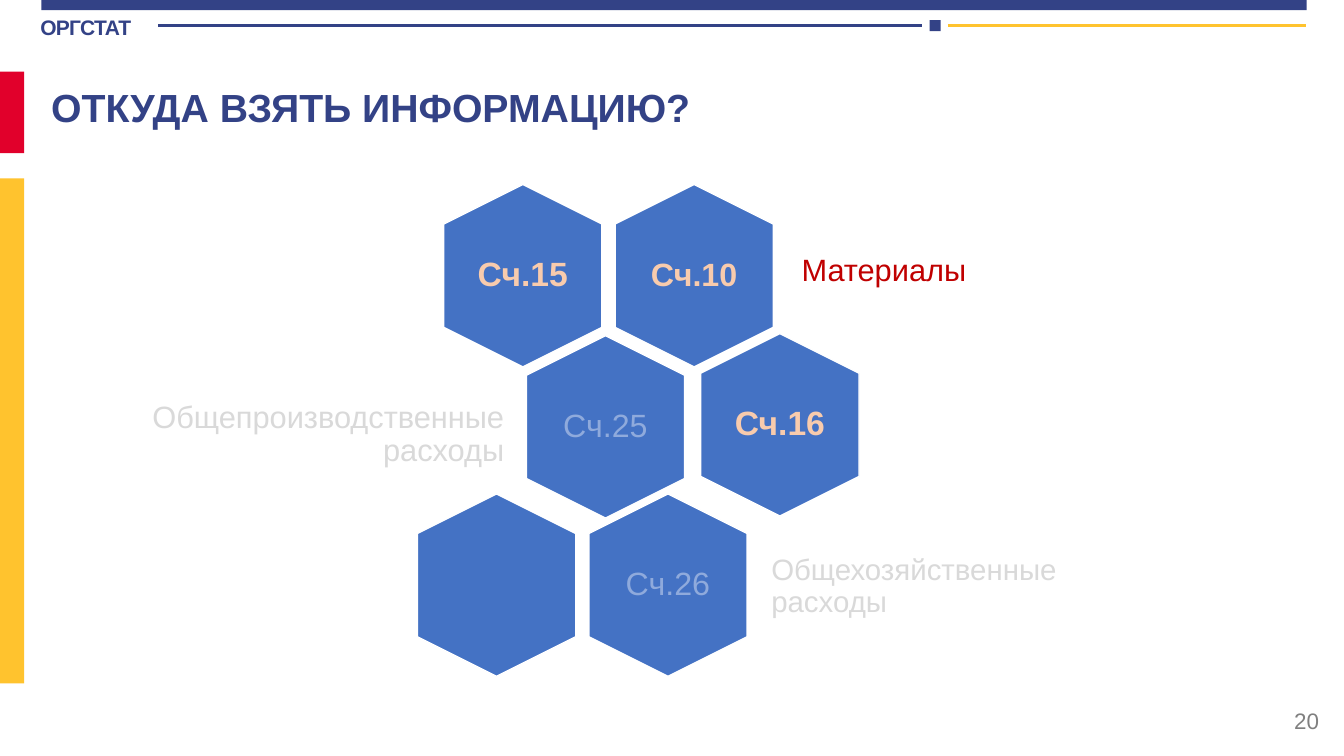
from pptx import Presentation
from pptx import util as u
from pptx.dml.color import RGBColor
from pptx.enum import shapes, text
from pptx.oxml.ns import qn
from lxml import etree

NAVY = RGBColor(0x33, 0x42, 0x86)
RED = RGBColor(0xE1, 0x00, 0x2B)
YELLOW = RGBColor(0xFF, 0xC3, 0x2E)
BLUE = RGBColor(0x44, 0x72, 0xC4)
WHITE = RGBColor(0xFF, 0xFF, 0xFF)
PEACH = RGBColor(0xF8, 0xCB, 0xAD)
PALE_BLUE = RGBColor(0x8F, 0xAA, 0xDC)
DARK_RED = RGBColor(0xC0, 0x00, 0x00)
PALE_GRAY = RGBColor(0xD9, 0xD9, 0xD9)
GRAY = RGBColor(0x80, 0x80, 0x80)

FONT = "Arial"
LEFT, CENTER, RIGHT = text.PP_ALIGN.LEFT, text.PP_ALIGN.CENTER, text.PP_ALIGN.RIGHT
TOP, MIDDLE = text.MSO_ANCHOR.TOP, text.MSO_ANCHOR.MIDDLE

# Grid of square cells: 133.3 columns by 75 rows
COLUMNS, ROWS = 133.3, 75
CELL = u.Inches(0.1)
HEXAGON_LENGTH, HEXAGON_WIDTH = 18.1, 15.7

# Centre column, centre row, caption, size, colour, bold
ACCOUNTS = [
    (68.85, 27.35, "Сч.10", 23, PEACH, True),
    (51.85, 27.35, "Сч.15", 24, PEACH, True),
    (60.05, 42.35, "Сч.25", 23, PALE_BLUE, False),
    (77.35, 42.15, "Сч.16", 24, PEACH, True),
    (66.25, 58.05, "Сч.26", 23, PALE_BLUE, False),
    (49.25, 58.05, "", 23, PALE_BLUE, False),
]

# Left, top, width, caption, size, colour, alignment
LABELS = [
    (78.6, 21.5, 30.9, "Материалы", 22, DARK_RED, LEFT),
    (8, 37.7, 42.9, "Общепроизводственные расходы", 22, PALE_GRAY, RIGHT),
    (75.6, 52.8, 41.4, "Общехозяйственные расходы", 21, PALE_GRAY, LEFT),
]


def cells(*counts):
    return [u.Emu(round(count * CELL)) for count in counts]


def add_block(slide, left, top, width, height, color):
    shape = slide.shapes.add_shape(
        shapes.MSO_SHAPE.RECTANGLE, *cells(left, top, width, height))
    shape.shadow.inherit = False
    shape.fill.solid()
    shape.fill.fore_color.rgb = color
    shape.line.fill.background()


def add_rule(slide, start, end, row, color):
    rule = slide.shapes.add_connector(
        shapes.MSO_CONNECTOR.STRAIGHT, *cells(start, row, end, row))
    rule.line.color.rgb = color
    rule.line.width = u.Pt(2)
    etree.SubElement(rule._element.spPr, qn("a:effectLst"))


def add_text(slide, left, top, width, height, caption, size, color, bold=False,
             align=LEFT, anchor=MIDDLE, margins=(1, 0.5), line_spacing=1):
    box = slide.shapes.add_textbox(*cells(left, top, width, height))
    frame = box.text_frame
    frame.word_wrap = True
    frame.vertical_anchor = anchor
    side, edge = cells(*margins)
    frame.margin_left = frame.margin_right = side
    frame.margin_top = frame.margin_bottom = edge
    frame.text = caption
    paragraph = frame.paragraphs[0]
    paragraph.alignment = align
    paragraph.line_spacing = line_spacing
    run = paragraph.runs[0]
    run.font.name = FONT
    run.font.size = u.Pt(size)
    run.font.bold = bold
    run.font.color.rgb = color
    return run


def add_hexagon(slide, column, row, caption, size, color, bold):
    shape = slide.shapes.add_shape(
        shapes.MSO_SHAPE.HEXAGON,
        *cells(column - HEXAGON_LENGTH / 2, row - HEXAGON_WIDTH / 2,
               HEXAGON_LENGTH, HEXAGON_WIDTH))
    shape.rotation = 90
    shape.adjustments[0] = 0.25
    shape.shadow.inherit = False
    shape.fill.solid()
    shape.fill.fore_color.rgb = BLUE
    shape.line.color.rgb = WHITE
    shape.line.width = u.Pt(1)
    if caption:
        add_text(slide, column - 5.4, row - 6.25, 10.8, 12.5, caption, size, color,
                 bold, CENTER, margins=(0, 0), line_spacing=0.9)


def add_header(slide):
    add_block(slide, 4.1, 0, 125.5, 1, NAVY)
    agency = add_text(slide, 4, 1.3, 11.5, 3.2, "ОРГСТАТ", 15, NAVY, True,
                      anchor=TOP, margins=(0, 0.1))
    agency.font._element.set("spc", "-50")
    add_rule(slide, 15.7, 91.4, 2.5, NAVY)
    add_block(slide, 92.2, 2, 1.1, 1.1, NAVY)
    add_rule(slide, 94, 129.5, 2.5, YELLOW)


def main():
    presentation = Presentation()
    presentation.slide_width, presentation.slide_height = cells(COLUMNS, ROWS)
    slide = presentation.slides.add_slide(presentation.slide_layouts[6])

    # Header and side bars
    add_header(slide)
    add_block(slide, 0, 7.1, 2.4, 8.1, RED)
    add_block(slide, 0, 17.7, 2.4, 50.1, YELLOW)

    # Title and page number
    add_text(slide, 4.1, 7.8, 105, 6.1, "ОТКУДА ВЗЯТЬ ИНФОРМАЦИЮ?", 28, NAVY, True,
             anchor=TOP)
    add_text(slide, 101.8, 69.5, 30, 4, "20", 16, GRAY, align=RIGHT)

    # Honeycomb of accounts with their labels
    for account in ACCOUNTS:
        add_hexagon(slide, *account)
    for left, top, width, caption, size, color, align in LABELS:
        add_text(slide, left, top, width, 10.9, caption, size, color,
                 align=align, margins=(0.9, 0.9), line_spacing=0.9)

    presentation.save("out.pptx")


if __name__ == "__main__":
    main()
